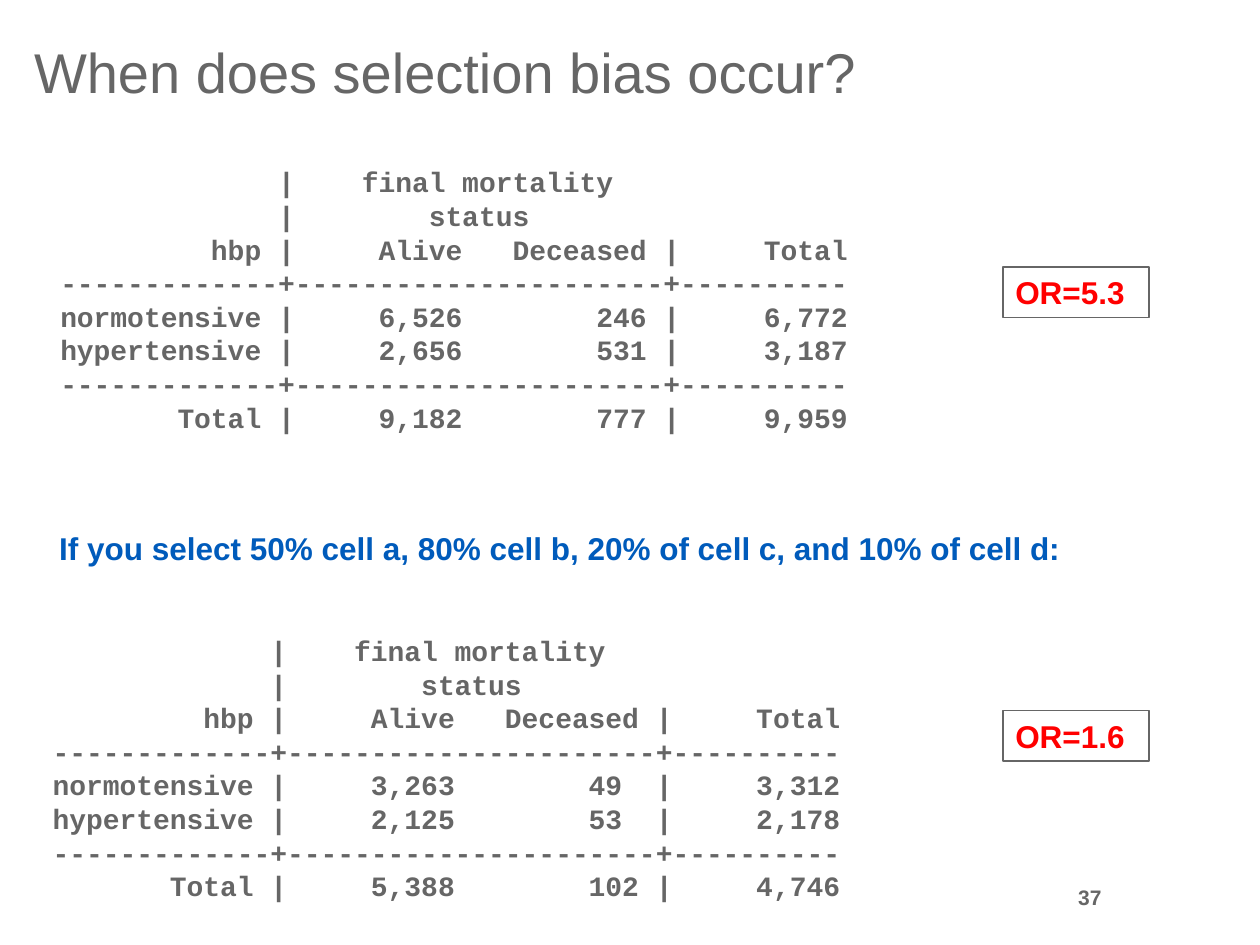
import pptx
import pptx.dml.color
import pptx.enum.text
import pptx.util

Inches = pptx.util.Inches
Pt = pptx.util.Pt
ANCHOR = pptx.enum.text.MSO_ANCHOR
ALIGN = pptx.enum.text.PP_ALIGN

WHITE = pptx.dml.color.RGBColor(0xFF, 0xFF, 0xFF)
GREY = pptx.dml.color.RGBColor(0x66, 0x66, 0x66)
RED = pptx.dml.color.RGBColor(0xFF, 0x00, 0x00)
BLUE = pptx.dml.color.RGBColor(0x00, 0x5B, 0xBB)


def write_lines(box, lines, size, color, bold=True, name="Arial"):
    """Fill a box with one paragraph per line, all in one font."""
    frame = box.text_frame
    frame.word_wrap = True
    frame.vertical_anchor = ANCHOR.TOP
    frame.margin_left = frame.margin_right = Inches(0.1)
    frame.margin_top = frame.margin_bottom = Inches(0.05)
    frame.text = "\n".join(lines)
    for para in frame.paragraphs:
        para.alignment = ALIGN.LEFT
        para.font.size = Pt(size)
        para.font.name = name
        para.font.bold = bold
        para.font.color.rgb = color


def add_box(left, top, width, height):
    return page.shapes.add_textbox(Inches(left), Inches(top), Inches(width), Inches(height))


deck = pptx.Presentation()
deck.slide_width = Inches(10)
deck.slide_height = Inches(7.5)
page = deck.slides.add_slide(deck.slide_layouts[5])

title = page.shapes.title
title.left, title.top = Inches(0.17), Inches(0.25)
title.width, title.height = Inches(9.16), Inches(0.64)
title.fill.solid()
title.fill.fore_color.rgb = WHITE
write_lines(title, ["When does selection bias occur?"], 32, GREY, bold=False)

# Each cross-tabulation: left, top, top of its odds ratio, odds ratio, rows
tabulations = [
    (0.38, 1.26, 2.12, "OR=5.3", [
        ("normotensive", "6,526", "246", "6,772"),
        ("hypertensive", "2,656", "531", "3,187"),
        ("Total", "9,182", "777", "9,959"),
    ]),
    (0.32, 4.98, 5.64, "OR=1.6", [
        ("normotensive", "3,263", "49 ", "3,312"),
        ("hypertensive", "2,125", "53 ", "2,178"),
        ("Total", "5,388", "102", "4,746"),
    ]),
]
row_format = "{:>12} |{:>10}{:>11} |{:>10}"
rule = "+".join("-" * count for count in (13, 22, 10))

for left, top, ratio_top, ratio, rows in tabulations:
    normal, high, total = [row_format.format(*row) for row in rows]
    lines = [
        "             |    final mortality",
        "             |        status",
        row_format.format("hbp", "Alive", "Deceased", "Total"),
        rule,
        normal,
        high,
        rule,
        total,
    ]
    write_lines(add_box(left, top, 7.32, 2.52), lines, 16, GREY, name="Courier New")

    ratio_box = add_box(7.96, ratio_top, 1.16, 0.4)
    ratio_box.line.color.rgb = GREY
    ratio_box.line.width = Pt(0.75)
    write_lines(ratio_box, [ratio], 18, RED)

condition = add_box(0.32, 4.15, 9.52, 0.4)
write_lines(
    condition,
    ["If you select 50% cell a, 80% cell b, 20% of cell c, and 10% of cell d:"],
    18, BLUE)
condition.text_frame.margin_left = Inches(0.15)

number = add_box(8.25, 6.83, 0.59, 0.58)
write_lines(number, ["37"], 12, GREY)
number.text_frame.vertical_anchor = ANCHOR.MIDDLE
number.text_frame.paragraphs[0].alignment = ALIGN.RIGHT

deck.save("out.pptx")
